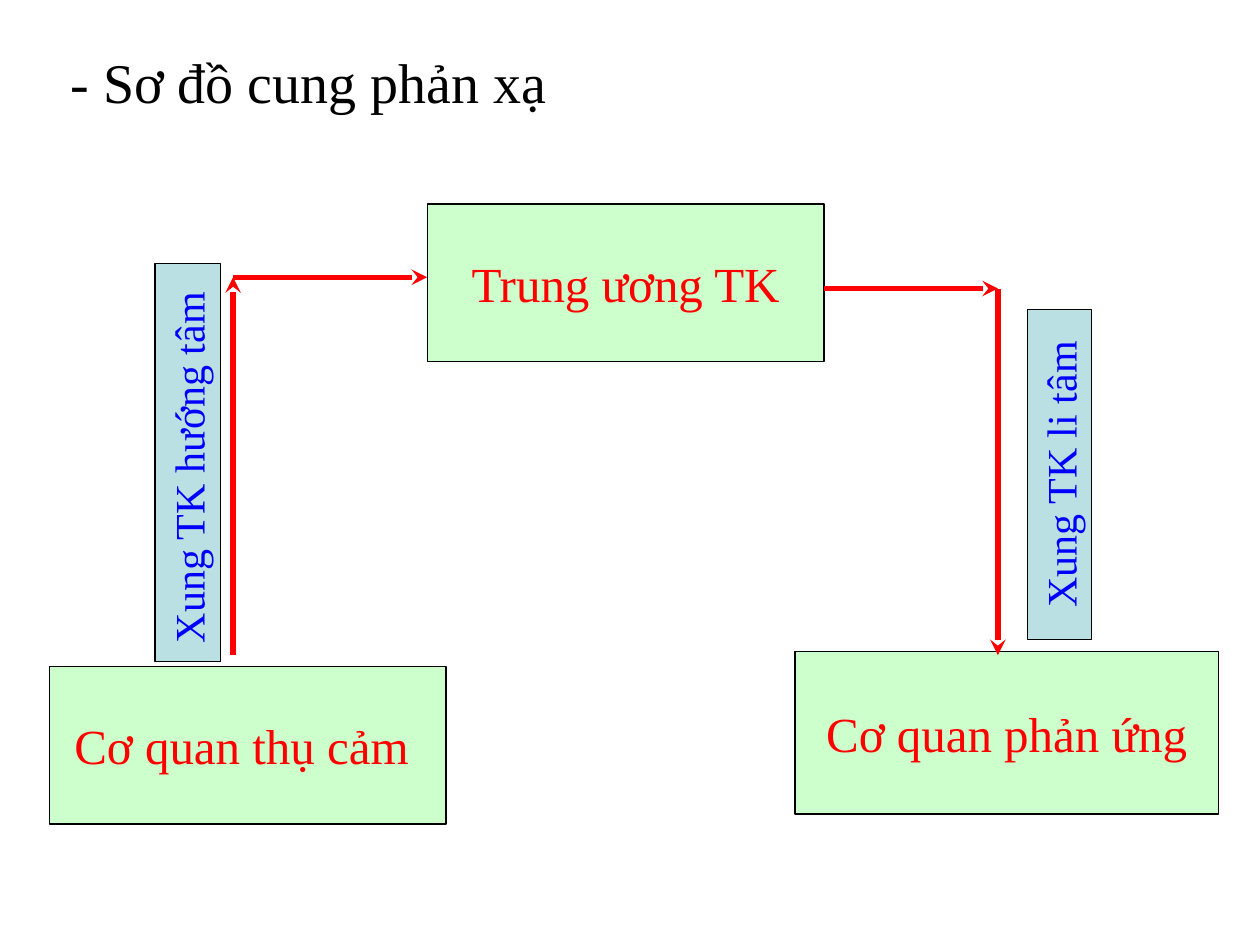
"""Build a slide with the diagram of a reflex arc."""
from lxml.etree import SubElement
from pptx import Presentation
from pptx.dml.color import RGBColor
from pptx.enum.shapes import MSO_CONNECTOR, MSO_SHAPE
from pptx.enum.text import MSO_ANCHOR, PP_ALIGN
from pptx.oxml.ns import qn
from pptx.util import Inches, Pt

COLOURS = {"black": "000000", "red": "FF0000", "blue": "0000FF",
           "organ": "CCFFCC", "impulse": "BBE0E3"}


def colour(name):
    return RGBColor.from_string(COLOURS[name])


def write(frame, text, size=28, ink="red", align=None, anchor=None, wrap=True):
    frame.word_wrap = wrap
    if anchor is not None:
        frame.vertical_anchor = anchor
    paragraph = frame.paragraphs[0]
    paragraph.alignment = align
    run = paragraph.add_run()
    run.text = text
    run.font.name = "Times New Roman"
    run.font.size = Pt(size)
    run.font.color.rgb = colour(ink)
    return paragraph


class ReflexSlide:
    def __init__(self, deck):
        self.slide = deck.slides.add_slide(deck.slide_layouts[1])
        self.shapes = self.slide.shapes

    def heading(self, text, left, top, width, height):
        title = self.shapes.title.element
        title.getparent().remove(title)
        body = self.slide.placeholders[1]
        body.left, body.top = Inches(left), Inches(top)
        body.width, body.height = Inches(width), Inches(height)
        paragraph = write(body.text_frame, text, size=32, ink="black")
        properties = paragraph._p.get_or_add_pPr()
        properties.set("marL", str(Inches(0.38)))
        properties.set("indent", str(-Inches(0.38)))
        SubElement(properties, qn("a:buNone"))

    def box(self, text, left, top, width, height, fill="organ", rotation=0, **style):
        box = self.shapes.add_shape(MSO_SHAPE.RECTANGLE, Inches(left), Inches(top),
                                    Inches(width), Inches(height))
        box.rotation = rotation
        box.shadow.inherit = False
        box.fill.solid()
        box.fill.fore_color.rgb = colour(fill)
        box.line.color.rgb = colour("black")
        box.line.width = Pt(0.75)
        write(box.text_frame, text, align=PP_ALIGN.CENTER,
              anchor=MSO_ANCHOR.MIDDLE, wrap=False, **style)

    def impulse(self, text, left, top, width, height):
        self.box(text, left, top, width, height, fill="impulse",
                 rotation=270, size=24, ink="blue")

    def arrow(self, start, end):
        arrow = self.shapes.add_connector(MSO_CONNECTOR.STRAIGHT,
                                          *map(Inches, start + end))
        arrow.line.color.rgb = colour("red")
        arrow.line.width = Pt(3)
        SubElement(arrow.line._get_or_add_ln(), qn("a:tailEnd"), type="stealth")
        SubElement(arrow._element.spPr, qn("a:effectLst"))

    def route(self, *points):
        for start, end in zip(points, points[1:]):
            self.arrow(start, end)


def main():
    deck = Presentation()
    deck.slide_width, deck.slide_height = Inches(10), Inches(7.5)
    reflex = ReflexSlide(deck)
    reflex.heading("- Sơ đồ cung phản xạ", 0.46, 0.33, 9, 6.2)
    reflex.box("Trung ương TK", 3.39, 1.62, 3.15, 1.25)
    reflex.box("Cơ quan thụ cảm ", 0.39, 5.29, 3.15, 1.25)
    reflex.box(" Cơ quan phản ứng ", 6.31, 5.17, 3.36, 1.29)
    reflex.route((1.85, 5.2), (1.85, 2.2), (3.39, 2.2))
    reflex.route((6.54, 2.29), (7.92, 2.29), (7.92, 5.2))
    reflex.impulse("Xung TK hướng tâm ", -0.09, 3.41, 3.16, 0.52)
    reflex.impulse("Xung TK li tâm", 7.1, 3.51, 2.62, 0.51)
    deck.save("out.pptx")


if __name__ == "__main__":
    main()
